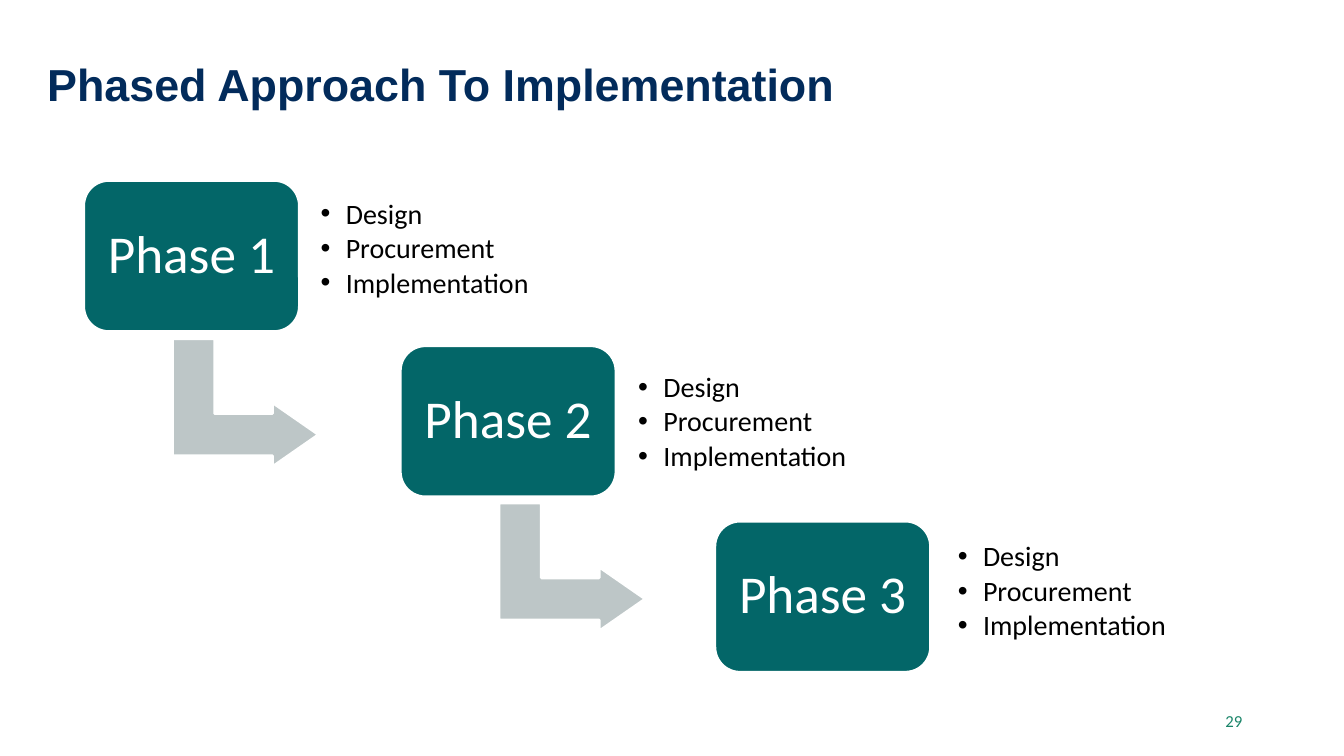
from dataclasses import dataclass

from lxml import etree
from pptx import Presentation
from pptx.dml.color import RGBColor
from pptx.enum.shapes import MSO_SHAPE
from pptx.enum.text import MSO_ANCHOR, PP_ALIGN
from pptx.oxml.ns import qn
from pptx.util import Inches, Pt

ROUNDED = MSO_SHAPE.ROUNDED_RECTANGLE
BENT_ARROW = MSO_SHAPE.BENT_UP_ARROW
MIDDLE, BOTTOM = MSO_ANCHOR.MIDDLE, MSO_ANCHOR.BOTTOM
LEFT, CENTER, RIGHT = PP_ALIGN.LEFT, PP_ALIGN.CENTER, PP_ALIGN.RIGHT


@dataclass(frozen=True)
class Theme:
    """Colours, fonts and type sizes of the slide."""

    navy: str = "022B5B"
    teal: str = "036668"
    green: str = "1A8569"
    gray: str = "BDC6C7"
    white: str = "FFFFFF"
    black: str = "000000"
    heading_font: str = "Arial"
    body_font: str = "Calibri"
    title_size: int = 32
    phase_size: int = 38
    step_size: int = 20
    number_size: int = 12


THEME = Theme()
PHASE_WIDTH, PHASE_HEIGHT = 2.14, 1.5
STEPS = ("Design", "Procurement", "Implementation")
PHASES = (
    ("Phase 1", (0.83, 1.79), (2.27, 0.08), (0.97, 1.48)),
    ("Phase 2", (3.97, 3.43), (2.28, 0.16), (1.07, 1.47)),
    ("Phase 3", (7.09, 5.17), (2.33, 0.1), None),
)


def set_frame(shape, anchor, margins):
    """Set wrapping, anchor and margins, and return the text frame."""
    frame = shape.text_frame
    frame.word_wrap = True
    frame.vertical_anchor = anchor
    frame.margin_left, frame.margin_top, frame.margin_right, frame.margin_bottom = map(Inches, margins)
    return frame


def add_run(paragraph, text, size, color, font=THEME.body_font, bold=False):
    """Add one formatted run to a paragraph."""
    run = paragraph.add_run()
    run.text = text
    run.font.name = font
    run.font.size = Pt(size)
    run.font.bold = bold
    run.font.color.rgb = RGBColor.from_string(color)


def add_textbox(slide, box, anchor, margins):
    """Add a text box and return its text frame."""
    return set_frame(slide.shapes.add_textbox(*map(Inches, box)), anchor, margins)


def add_filled_shape(slide, kind, box, color, adjustments):
    """Add a flat preset shape with a white outline."""
    shape = slide.shapes.add_shape(kind, *map(Inches, box))
    shape.shadow.inherit = False
    shape.fill.solid()
    shape.fill.fore_color.rgb = RGBColor.from_string(color)
    shape.line.color.rgb = RGBColor.from_string(THEME.white)
    shape.line.width = Pt(2)
    for index, value in enumerate(adjustments):
        shape.adjustments[index] = value
    return shape


def add_title(slide, box, text):
    """Add the slide title, resting on the bottom of its box."""
    paragraph = add_textbox(slide, box, BOTTOM, (0.1, 0.05, 0.1, 0)).paragraphs[0]
    paragraph.alignment = LEFT
    paragraph.line_spacing = 0.8
    add_run(paragraph, text, THEME.title_size, THEME.navy, THEME.heading_font, True)


def add_slide_number(slide, box, number):
    """Add the right-aligned slide number."""
    paragraph = add_textbox(slide, box, MIDDLE, (0.1, 0.05, 0.1, 0.05)).paragraphs[0]
    paragraph.alignment = RIGHT
    add_run(paragraph, number, THEME.number_size, THEME.green)


def add_steps(slide, box, steps):
    """Add the bulleted steps of a phase."""
    frame = add_textbox(slide, box, MIDDLE, (0.08,) * 4)
    for index, step in enumerate(steps):
        paragraph = frame.add_paragraph() if index else frame.paragraphs[0]
        properties = paragraph._p.get_or_add_pPr()
        properties.set("marL", str(Inches(0.25)))
        properties.set("indent", str(-Inches(0.25)))
        etree.SubElement(properties, qn("a:buFont")).set("typeface", THEME.heading_font)
        etree.SubElement(properties, qn("a:buChar")).set("char", "•")
        paragraph.line_spacing = 0.9
        paragraph.space_after = Pt(0.15 * THEME.step_size)
        add_run(paragraph, step, THEME.step_size, THEME.black)


def add_phase(slide, origin, name, steps_offset, arrow_offset):
    """Add a phase card, its steps and the arrow to the next phase."""
    left, top = origin
    if arrow_offset:
        arrow_box = (left + arrow_offset[0], top + arrow_offset[1], 1.27, 1.45)
        arrow = add_filled_shape(slide, BENT_ARROW, arrow_box, THEME.gray, (0.33, 0.25, 0.36))
        arrow.rotation = 90
    card_box = (left, top, PHASE_WIDTH, PHASE_HEIGHT)
    card = add_filled_shape(slide, ROUNDED, card_box, THEME.teal, (0.167,))
    paragraph = set_frame(card, MIDDLE, (0.16,) * 4).paragraphs[0]
    paragraph.alignment = CENTER
    paragraph.line_spacing = 0.9
    add_run(paragraph, name, THEME.phase_size, THEME.white)
    add_steps(slide, (left + steps_offset[0], top + steps_offset[1], 2.64, 1.21), STEPS)


def main():
    """Build and save the slide."""
    presentation = Presentation()
    presentation.slide_width, presentation.slide_height = Inches(13.33), Inches(7.5)
    slide = presentation.slides.add_slide(presentation.slide_layouts[6])
    add_title(slide, (0.37, 0.3, 12.34, 0.79), "Phased Approach To Implementation")
    for name, origin, steps_offset, arrow_offset in PHASES:
        add_phase(slide, origin, name, steps_offset, arrow_offset)
    add_slide_number(slide, (9.42, 6.95, 3, 0.4), "29")
    presentation.save("out.pptx")


if __name__ == "__main__":
    main()
